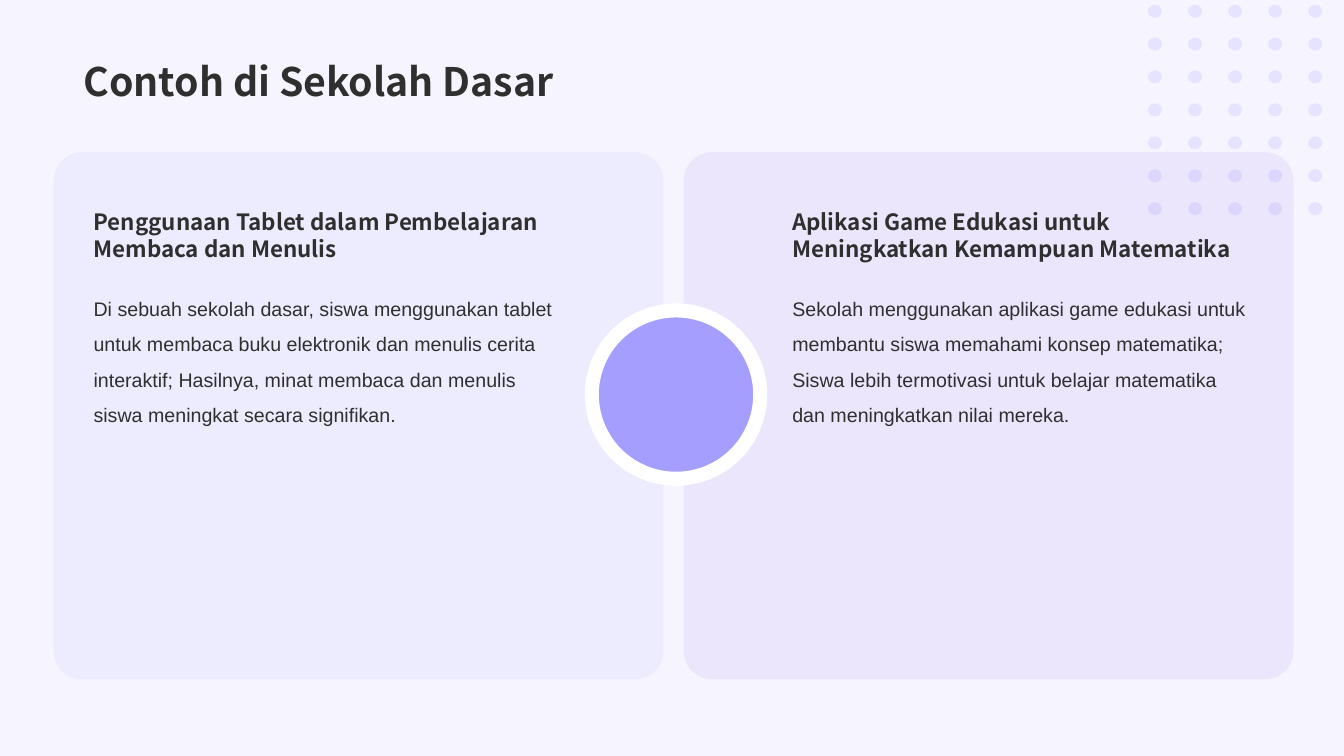
from dataclasses import dataclass
from itertools import product

from lxml import etree
from pptx import Presentation
from pptx import util as u
from pptx.dml.color import RGBColor
from pptx.enum import shapes, text
from pptx.oxml import ns
from pptx.shapes.autoshape import Shape
from pptx.slide import Slide


@dataclass(frozen=True)
class Theme:
    """Colours, fonts and type sizes of the slide."""

    background: str = "F6F5FF"
    violet: str = "A49FFF"
    purple: str = "9567EC"
    white: str = "FFFFFF"
    ink: str = "2F2F2F"
    heading_font: str = "Noto Sans CJK SC"
    body_font: str = "Arial"
    title_size: int = 28
    heading_size: int = 16
    body_size: int = 14


@dataclass(frozen=True)
class Box:
    """A rectangle measured in inches."""

    left: float
    top: float
    width: float
    height: float

    def emu(self) -> tuple[int, ...]:
        """Return the four measures as slide lengths."""
        return tuple(u.Inches(value) for value in (self.left, self.top, self.width, self.height))


@dataclass(frozen=True)
class TextStyle:
    """The look of one block of text."""

    font: str
    size: int
    bold: bool = False
    line_spacing: float | None = None
    anchor: text.MSO_ANCHOR = text.MSO_ANCHOR.TOP
    grows: bool = True


@dataclass(frozen=True)
class Card:
    """A tinted panel with a heading and a body."""

    left: float
    text_left: float
    body_height: float
    color: str
    heading: str
    body: str


THEME = Theme()
TITLE = TextStyle(THEME.heading_font, THEME.title_size, True,
                  anchor=text.MSO_ANCHOR.BOTTOM, grows=False)
HEADING = TextStyle(THEME.heading_font, THEME.heading_size, True,
                    anchor=text.MSO_ANCHOR.BOTTOM)
BODY = TextStyle(THEME.body_font, THEME.body_size, line_spacing=1.5)
CARDS = (
    Card(6.78, 7.76, 1.12, THEME.purple,
         "Aplikasi Game Edukasi untuk Meningkatkan Kemampuan Matematika",
         "Sekolah menggunakan aplikasi game edukasi untuk membantu siswa memahami konsep "
         "matematika; Siswa lebih termotivasi untuk belajar matematika dan meningkatkan "
         "nilai mereka."),
    Card(0.53, 0.83, 1.47, THEME.violet,
         "Penggunaan Tablet dalam Pembelajaran Membaca dan Menulis",
         "Di sebuah sekolah dasar, siswa menggunakan tablet untuk membaca buku elektronik "
         "dan menulis cerita interaktif; Hasilnya, minat membaca dan menulis siswa "
         "meningkat secara signifikan."),
)


def add_figure(slide: Slide, kind: shapes.MSO_SHAPE, box: Box, color: str,
               opacity: int = 100) -> Shape:
    """Add a borderless filled shape with the given opacity in percent."""
    shape = slide.shapes.add_shape(kind, *box.emu())
    shape.shadow.inherit = False
    shape.fill.solid()
    shape.fill.fore_color.rgb = RGBColor.from_string(color)
    shape.line.fill.background()
    if opacity < 100:
        fill_color = shape.fill._xPr.find(".//" + ns.qn("a:srgbClr"))
        etree.SubElement(fill_color, ns.qn("a:alpha"), val=str(opacity * 1000))
    return shape


def add_text(slide: Slide, box: Box, words: str, style: TextStyle) -> None:
    """Add a wrapped text box with one styled paragraph."""
    frame = slide.shapes.add_textbox(*box.emu()).text_frame
    frame.word_wrap = True
    frame.vertical_anchor = style.anchor
    if style.grows:
        frame.auto_size = text.MSO_AUTO_SIZE.SHAPE_TO_FIT_TEXT
    paragraph = frame.paragraphs[0]
    paragraph.line_spacing = style.line_spacing
    run = paragraph.add_run()
    run.text = words
    run.font.name = style.font
    run.font.size = u.Pt(style.size)
    run.font.bold = style.bold
    run.font.color.rgb = RGBColor.from_string(THEME.ink)


def add_dots(slide: Slide, rows: int = 7, columns: int = 5) -> None:
    """Add the grid of pale dots in the top right corner."""
    column_gap, row_gap = 1.59 / (columns - 1), 1.96 / (rows - 1)
    for row, column in product(range(rows), range(columns)):
        box = Box(11.39 + column * column_gap, 0.04 + row * row_gap, 0.13, 0.14)
        dot = add_figure(slide, shapes.MSO_SHAPE.OVAL, box, THEME.violet, 20)
        dot.rotation = 270


def add_card(slide: Slide, card: Card) -> None:
    """Add one panel with its two blocks of text."""
    panel = add_figure(slide, shapes.MSO_SHAPE.ROUNDED_RECTANGLE,
                       Box(card.left, 1.51, 6.05, 5.23), card.color, 10)
    panel.adjustments[0] = 0.054
    add_text(slide, Box(card.text_left, 2.28, 4.77, 0.37), card.heading, HEADING)
    add_text(slide, Box(card.text_left, 2.78, 4.77, card.body_height), card.body, BODY)


def main() -> None:
    """Build and save the slide."""
    presentation = Presentation()
    presentation.slide_width = u.Inches(13.33)
    presentation.slide_height = u.Inches(7.5)
    slide = presentation.slides.add_slide(presentation.slide_layouts[6])
    slide.background.fill.solid()
    slide.background.fill.fore_color.rgb = RGBColor.from_string(THEME.background)
    add_dots(slide)
    for card in CARDS:
        add_card(slide, card)
    circle = add_figure(slide, shapes.MSO_SHAPE.OVAL, Box(5.87, 3.08, 1.67, 1.67), THEME.violet)
    circle.line.color.rgb = RGBColor.from_string(THEME.white)
    circle.line.width = u.Pt(10)
    add_text(slide, Box(0.73, 0.1, 11.88, 0.98), "Contoh di Sekolah Dasar", TITLE)
    presentation.save("out.pptx")


if __name__ == "__main__":
    main()
